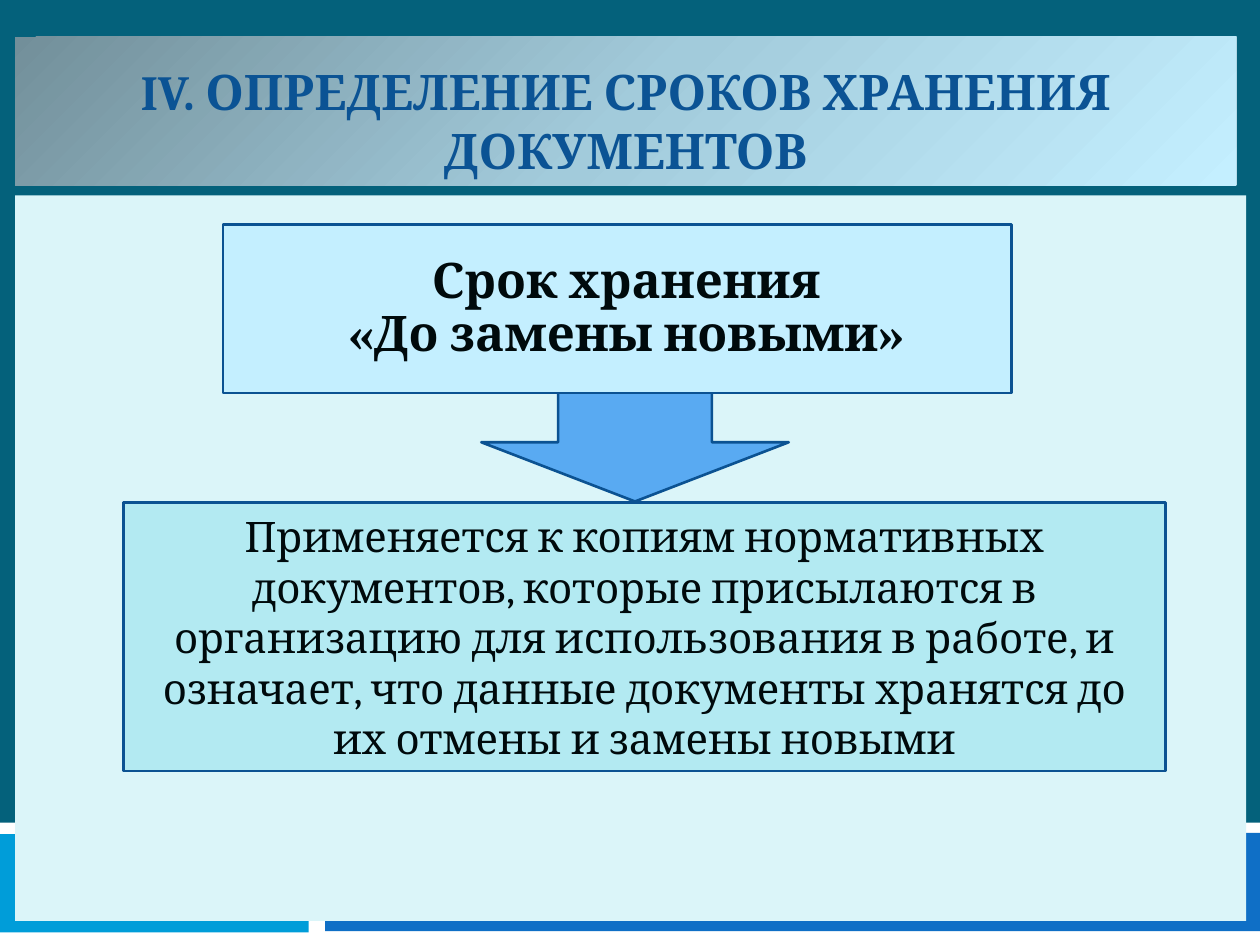
import copy

import pptx
import pptx.dml.color
import pptx.enum.shapes
import pptx.enum.text
import pptx.util

Inches = pptx.util.Inches
Pt = pptx.util.Pt
RGBColor = pptx.dml.color.RGBColor
Shape = pptx.enum.shapes.MSO_SHAPE
Anchor = pptx.enum.text.MSO_ANCHOR

FONT = "Cambria"
BACKGROUND = RGBColor(0x04, 0x61, 0x7B)
WHITE = RGBColor(0xFF, 0xFF, 0xFF)
CYAN = RGBColor(0x00, 0x9D, 0xD9)
BLUE = RGBColor(0x0F, 0x6F, 0xC6)
PANEL = RGBColor(0xDB, 0xF5, 0xF9)
TITLE_INK = RGBColor(0x0B, 0x53, 0x94)
INK = RGBColor(0x00, 0x0A, 0x0C)
OUTLINE = RGBColor(0x0B, 0x52, 0x92)
TERM_FILL = RGBColor(0xC4, 0xEF, 0xFF)
MEANING_FILL = RGBColor(0xB3, 0xEA, 0xF2)
ARROW_FILL = RGBColor(0x59, 0xAA, 0xF2)
GRADIENT = [
    (0, RGBColor(0x72, 0x8F, 0x9A)),
    (0.5, RGBColor(0xA2, 0xCB, 0xDB)),
    (1, TERM_FILL),
]

TITLE = "IV. ОПРЕДЕЛЕНИЕ СРОКОВ ХРАНЕНИЯ ДОКУМЕНТОВ"
TERM = "Срок хранения\n«До замены новыми»"
MEANING = (
    "Применяется к копиям нормативных документов, которые присылаются в "
    "организацию для использования в работе, и означает, что данные "
    "документы хранятся до их отмены и замены новыми"
)
BACKDROP = [
    ((0, 6.53, 10, 0.97), WHITE),
    ((0, 6.62, 2.45, 0.78), CYAN),
    ((2.58, 6.61, 7.42, 0.78), BLUE),
    ((0.12, 1.55, 9.77, 5.76), PANEL),
]
TITLE_PLACE = (0.12, 0.29, 9.69, 1.18)
MEANING_PLACE = (0.98, 3.99, 8.27, 2.13)
ARROW_PLACE = (3.82, 3.04, 2.44, 0.94)
TERM_PLACE = (1.77, 1.78, 6.26, 1.34)


def add_block(page, place, fill, kind=Shape.RECTANGLE, outlined=True):
    block = page.shapes.add_shape(kind, *map(Inches, place))
    block.shadow.inherit = False
    block.fill.solid()
    block.fill.fore_color.rgb = fill
    if outlined:
        block.line.color.rgb = OUTLINE
        block.line.width = Pt(1.5)
    else:
        block.line.fill.background()
    return block


def write(shape, text, size, color, bold, anchor):
    frame = shape.text_frame
    frame.text = text
    frame.word_wrap = True
    frame.auto_size = pptx.enum.text.MSO_AUTO_SIZE.NONE
    frame.vertical_anchor = anchor
    for paragraph in frame.paragraphs:
        paragraph.alignment = pptx.enum.text.PP_ALIGN.CENTER
        for span in paragraph.runs:
            span.font.name = FONT
            span.font.size = Pt(size)
            span.font.bold = bold
            span.font.color.rgb = color


def fill_gradient(shape, colors):
    shape.fill.gradient()
    shape.fill.gradient_angle = 315
    stops = shape.fill._fill._gradFill.gsLst
    stops.insert(1, copy.deepcopy(stops[0]))
    for stop, (position, color) in zip(shape.fill.gradient_stops, colors):
        stop.position = position
        stop.color.rgb = color


def main():
    deck = pptx.Presentation()
    deck.slide_width, deck.slide_height = Inches(10), Inches(7.5)
    page = deck.slides.add_slide(deck.slide_layouts[5])
    page.background.fill.solid()
    page.background.fill.fore_color.rgb = BACKGROUND

    for place, color in BACKDROP:
        add_block(page, place, color, outlined=False)

    title = page.shapes.title
    title.left, title.top, title.width, title.height = map(Inches, TITLE_PLACE)
    fill_gradient(title, GRADIENT)
    write(title, TITLE, 28, TITLE_INK, True, Anchor.BOTTOM)

    meaning = add_block(page, MEANING_PLACE, MEANING_FILL)
    write(meaning, MEANING, 24, INK, False, Anchor.MIDDLE)

    add_block(page, ARROW_PLACE, ARROW_FILL, Shape.DOWN_ARROW)

    term = add_block(page, TERM_PLACE, TERM_FILL)
    write(term, TERM, 28, INK, True, Anchor.MIDDLE)
    for paragraph in term.text_frame.paragraphs:
        paragraph.line_spacing = 0.9
        properties = paragraph._p.get_or_add_pPr()
        properties.set("marL", str(Inches(0.54)))
        properties.set("indent", str(Inches(-0.4)))

    deck.save("out.pptx")


if __name__ == "__main__":
    main()
